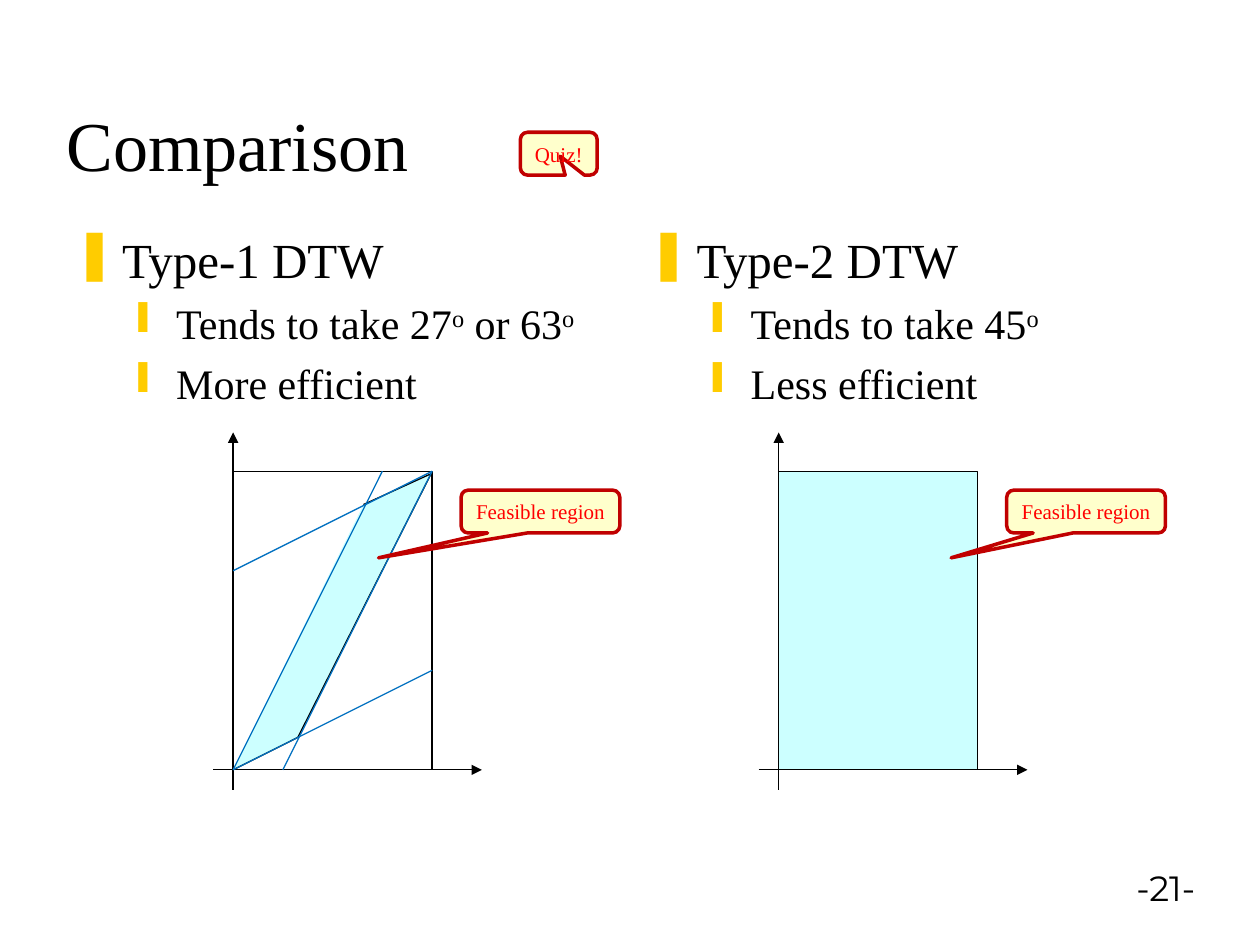
from lxml import etree
from pptx import Presentation
from pptx.dml.color import RGBColor
from pptx.enum.shapes import MSO_CONNECTOR, MSO_SHAPE
from pptx.enum.text import MSO_ANCHOR, PP_ALIGN
from pptx.oxml.ns import qn
from pptx.util import Inches, Pt

RECTANGLE = MSO_SHAPE.RECTANGLE
CALLOUT = MSO_SHAPE.ROUNDED_RECTANGULAR_CALLOUT
STRAIGHT = MSO_CONNECTOR.STRAIGHT
TOP, MIDDLE, BOTTOM = MSO_ANCHOR.TOP, MSO_ANCHOR.MIDDLE, MSO_ANCHOR.BOTTOM
LEFT, CENTER = PP_ALIGN.LEFT, PP_ALIGN.CENTER

SERIF = "Times New Roman"
BLACK, BLUE, RED = "000000", "0070C0", "FF0000"
DARK_RED, CREAM, AQUA, GOLD = "C00000", "FFFFCC", "CCFFFF", "FFCC00"

# Each plot is a grid of 4 columns by 6 rows, counted from its origin
COLUMNS, ROWS = 4, 6
UNIT = 1.58 / COLUMNS
BASELINE = 6.11
PLOT_LEFTS = (1.85, 6.18)

# Bullet, size, left margin, hanging indent and space before, by level
LEVELS = (("❚", 28, 0.38, 0.38, 0), ("❙", 24, 0.81, 0.31, 5.5))


def color(hex_code):
    return RGBColor.from_string(hex_code)


def inches(*lengths):
    return [Inches(length) for length in lengths]


def grid_point(left, column, row):
    return left + column * UNIT, BASELINE - row * UNIT


def style_shape(shape, fill=None, line=BLACK, width=0.75):
    shape.shadow.inherit = False
    if fill:
        shape.fill.solid()
        shape.fill.fore_color.rgb = color(fill)
    else:
        shape.fill.background()
    shape.line.color.rgb = color(line)
    shape.line.width = Pt(width)


def write(paragraph, text, size=12, font=SERIF, ink=BLACK, align=LEFT):
    """Write text in which ^ stands before and after a superscript."""
    paragraph.alignment = align
    for index, part in enumerate(text.split("^")):
        if not part:
            continue
        run = paragraph.add_run()
        run.text = part
        run.font.size = Pt(size)
        run.font.name = font
        run.font.color.rgb = color(ink)
        if index % 2:
            run._r.get_or_add_rPr().set("baseline", "30000")


def add_text_box(slide, box, anchor=TOP, wrap=True):
    frame = slide.shapes.add_textbox(*inches(*box)).text_frame
    frame.word_wrap = wrap
    frame.vertical_anchor = anchor
    return frame


def set_bullet(paragraph, level):
    bullet, size, margin, hanging, before = LEVELS[level]
    paragraph.space_before = Pt(before)
    properties = paragraph._p.get_or_add_pPr()
    properties.set("marL", str(Inches(margin)))
    properties.set("indent", str(-Inches(hanging)))
    bullet_color = etree.SubElement(properties, qn("a:buClr"))
    etree.SubElement(bullet_color, qn("a:srgbClr"), val=GOLD)
    etree.SubElement(properties, qn("a:buChar"), char=bullet)
    return size


def add_bullets(slide, left, heading, points):
    frame = add_text_box(slide, (left, 1.77, 4.39, 4.56))
    for index, text in enumerate([heading, *points]):
        paragraph = frame.add_paragraph() if index else frame.paragraphs[0]
        paragraph.level = min(index, 1)
        size = set_bullet(paragraph, paragraph.level)
        write(paragraph, text, size=size)


def add_line(slide, start, end, ink=BLACK, arrow=False):
    connector = slide.shapes.add_connector(STRAIGHT, *inches(*start, *end))
    connector.line.color.rgb = color(ink)
    connector.line.width = Pt(0.75)
    if arrow:
        etree.SubElement(connector.line._get_or_add_ln(), qn("a:tailEnd"), type="triangle")
    etree.SubElement(connector._element.spPr, qn("a:effectLst"))


def add_axes(slide, left):
    for start, end in (((-0.4, 0), (5, 0)), ((0, -0.4), (0, 6.78))):
        add_line(slide, grid_point(left, *start), grid_point(left, *end), arrow=True)


def add_frame(slide, left, fill=None):
    corner = grid_point(left, 0, ROWS)
    frame = slide.shapes.add_shape(
        RECTANGLE, *inches(*corner, COLUMNS * UNIT, ROWS * UNIT))
    style_shape(frame, fill)


def add_feasible_band(slide, left):
    corners = [inches(*grid_point(left, column, row)) for column, row in
               ((0, 0), (1.3, 0.65), (3.98, 5.95), (2.62, 5.33))]
    builder = slide.shapes.build_freeform(*corners[0])
    builder.add_line_segments(corners[1:], close=False)
    style_shape(builder.convert_to_shape(), AQUA)


def add_callout(slide, box, text, tip):
    callout = slide.shapes.add_shape(CALLOUT, *inches(*box))
    style_shape(callout, CREAM, DARK_RED, 2)
    callout.adjustments[0], callout.adjustments[1] = tip
    frame = callout.text_frame
    frame.word_wrap = False
    frame.vertical_anchor = MIDDLE
    write(frame.paragraphs[0], text, ink=RED, align=CENTER)


def main():
    deck = Presentation()
    deck.slide_width, deck.slide_height = inches(10, 7.5)
    slide = deck.slides.add_slide(deck.slide_layouts[6])

    # Title and page number
    title = add_text_box(slide, (0.43, 0.27, 8.5, 1.25), anchor=BOTTOM)
    write(title.paragraphs[0], "Comparison", size=40)
    page = add_text_box(slide, (8.92, 6.83, 0.75, 0.43), wrap=False)
    write(page.paragraphs[0], "-21-", size=20, font="Montserrat")

    # The two methods
    add_bullets(slide, 0.49, "Type-1 DTW",
                ("Tends to take 27^o^ or 63^o^", "More efficient"))
    add_bullets(slide, 5.05, "Type-2 DTW",
                ("Tends to take 45^o^", "Less efficient"))

    # Type-1 plot: band between the slope limits
    type1_left, type2_left = PLOT_LEFTS
    add_feasible_band(slide, type1_left)
    add_frame(slide, type1_left)
    add_axes(slide, type1_left)
    for start, end in (((0, 0), (4, 2)), ((0, 4), (4, 6)),
                       ((0, 0), (3, 6)), ((1, 0), (4, 6))):
        add_line(slide, grid_point(type1_left, *start),
                 grid_point(type1_left, *end), ink=BLUE)

    # Type-2 plot: the whole frame is feasible
    add_frame(slide, type2_left, AQUA)
    add_axes(slide, type2_left)

    # Callouts
    add_callout(slide, (4.13, 1.05, 0.61, 0.34), "Quiz!", (0.02, 0.06))
    for left, reach in zip(PLOT_LEFTS, (-1.02, -0.85)):
        add_callout(slide, (left + 1.81, 3.89, 1.26, 0.34),
                    "Feasible region", (reach, 1.08))

    deck.save("out.pptx")


if __name__ == "__main__":
    main()
